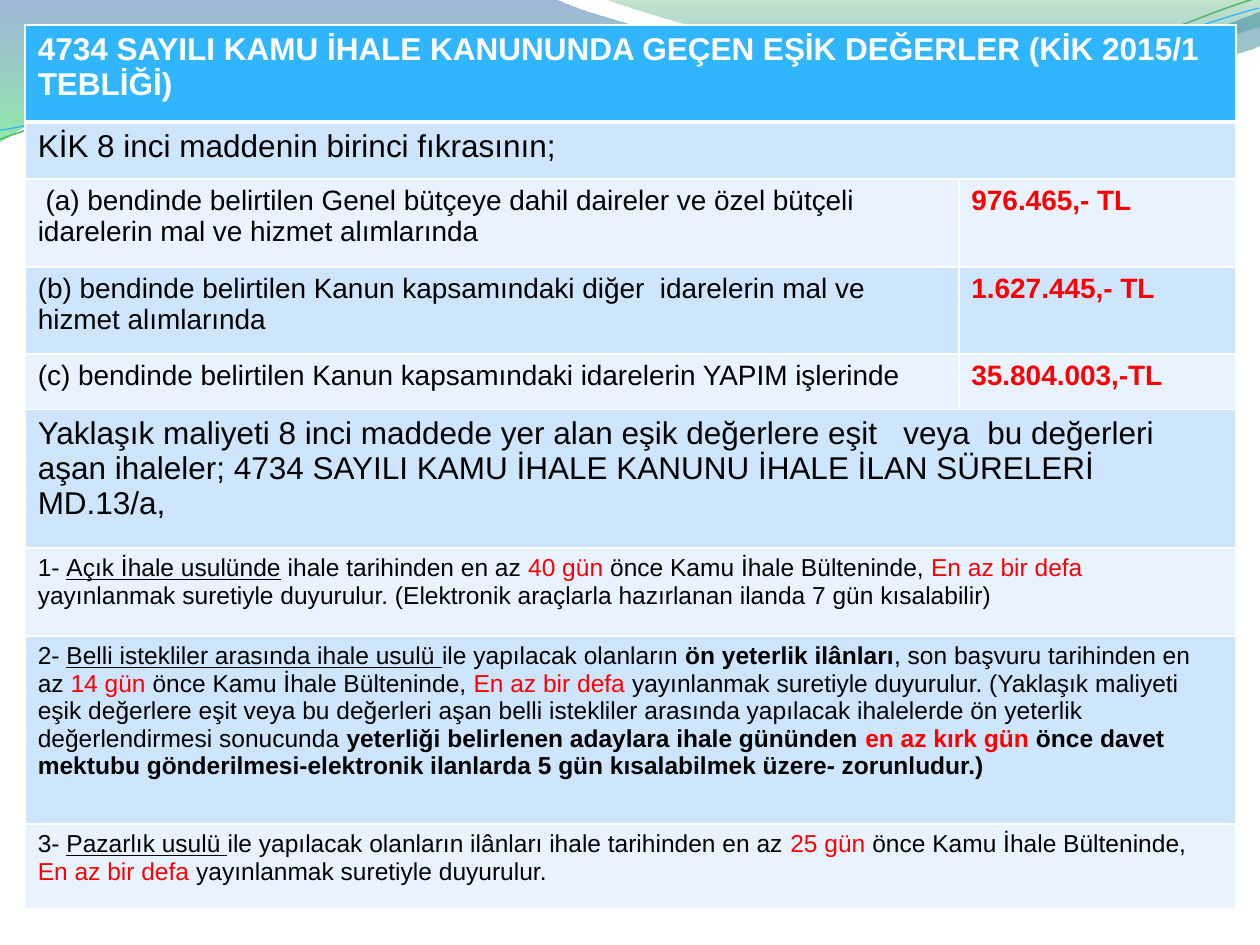
from lxml import etree
from pptx import Presentation
from pptx.dml.color import RGBColor
from pptx.oxml.ns import qn
from pptx.util import Pt

PX = 9144  # one px is a hundredth of an inch
FONT = "Arial"
LINE_TILT = 357.3
CELL_MARGIN_RIGHT = 14
COLORS = {
    "head": "31B6FD", "band_dark": "CEE5FE", "band_light": "E8F3FF",
    "text": "000000", "white": "FFFFFF", "red": "FF0000",
    "navy": "2960A7", "lime": "35DA5E", "green": "36A752", "blue": "2472D3",
    "green_line": "50B86A", "blue_line": "31B6FD",
}

# Wave outlines: a start point, then lines (one point) and curves (three points)
LEFT_WAVE = [
    [(0, 0)], [(440, -1)],
    [(476, 17), (664, 63), (758, 63)], [(853, 63), (958, 26), (1000, 9)],
    [(1001, 36)],
    [(983, 44), (870, 76), (746, 75)], [(622, 75), (382, 28), (257, 34)],
    [(129, 36), (46, 83), (-1, 113)],
]
RIGHT_WAVE = [
    [(479, -1)], [(509, 11), (682, 62), (769, 65)],
    [(856, 69), (961, 32), (1000, 21)], [(1000, 0)],
]
# Thin lines, before they are tilted
GREEN_LINE = [
    [(-2, 87)], [(47, 72), (158, 41), (277, 42)],
    [(396, 42), (591, 93), (712, 90)], [(832, 87), (940, 36), (1000, 22)],
]
BLUE_LINE = [
    [(-2, 80)], [(46, 75), (164, 45), (283, 46)],
    [(403, 46), (596, 88), (716, 85)], [(836, 83), (942, 42), (1001, 30)],
]

# Rows: height, text size, then cells as lists of (text, marks)
# Marks: b bold, u underlined, r red, w white
ROWS = [
    (77, 18, [[("4734 SAYILI KAMU İHALE KANUNUNDA GEÇEN EŞİK DEĞERLER (KİK 2015/1 TEBLİĞİ)", "bw")]]),
    (45, 18, [[("KİK 8 inci maddenin birinci fıkrasının;", "")]]),
    (70, 16, [[(" (a) bendinde belirtilen Genel bütçeye dahil daireler ve özel bütçeli "
                "idarelerin mal ve hizmet alımlarında", "")], [("976.465,- TL", "br")]]),
    (69, 16, [[("(b) bendinde belirtilen Kanun kapsamındaki diğer  idarelerin mal ve "
                "hizmet alımlarında", "")], [("1.627.445,- TL", "br")]]),
    (44, 16, [[("(c) bendinde belirtilen Kanun kapsamındaki idarelerin YAPIM işlerinde", "")],
              [("35.804.003,-TL", "br")]]),
    (110, 18, [[("Yaklaşık maliyeti 8 inci maddede yer alan eşik değerlere eşit   veya  bu "
                 "değerleri aşan ihaleler; 4734 SAYILI KAMU İHALE KANUNU İHALE İLAN "
                 "SÜRELERİ  MD.13/a,", "")]]),
    (70, 14, [[("1- ", ""), ("Açık İhale usulünde", "u"), (" ihale tarihinden en az ", ""),
               ("40 gün", "r"), (" önce Kamu İhale Bülteninde, ", ""), ("En az bir defa", "r"),
               (" yayınlanmak suretiyle duyurulur. (Elektronik araçlarla hazırlanan "
                "ilanda 7 gün kısalabilir)", "")]]),
    (149, 14, [[("2- ", ""), ("Belli istekliler arasında ihale usulü ", "u"),
                ("ile yapılacak olanların ", ""), ("ön yeterlik ilânları", "b"),
                (", son başvuru tarihinden en az ", ""), ("14 gün ", "r"),
                ("önce Kamu İhale Bülteninde, ", ""), ("En az bir defa ", "r"),
                ("yayınlanmak suretiyle duyurulur. (Yaklaşık maliyeti eşik değerlere eşit "
                 "veya bu değerleri aşan belli istekliler arasında yapılacak ihalelerde ön "
                 "yeterlik değerlendirmesi sonucunda ", ""),
                ("yeterliği belirlenen adaylara ihale gününden ", "b"), ("en az kırk gün ", "br"),
                ("önce davet mektubu gönderilmesi-elektronik ilanlarda 5 gün kısalabilmek "
                 "üzere- zorunludur.)", "b")]]),
    (67, 14, [[("3- ", ""), ("Pazarlık usulü ", "u"),
               ("ile yapılacak olanların ilânları ihale tarihinden en az ", ""),
               ("25 gün ", "r"), ("önce Kamu İhale Bülteninde, ", ""), ("En az bir defa", "r"),
               (" yayınlanmak suretiyle duyurulur.", "")]]),
]


def rgb(name):
    return RGBColor.from_string(COLORS[name])


def add_outline(page, origin, outline, close):
    """Build the outline through all its points, then bend the three-point segments."""
    points = [point for segment in outline for point in segment]
    builder = page.shapes.build_freeform(*points[0], scale=PX)
    builder.add_line_segments(points[1:], close=close)
    shape = builder.convert_to_shape(origin[0] * PX, origin[1] * PX)
    shape.shadow.inherit = False
    lines = shape._element.spPr.iter(qn("a:lnTo"))
    lines = iter(list(lines))
    for segment in outline[1:]:
        steps = [next(lines) for _ in segment]
        if len(steps) == 3:
            curve = etree.Element(qn("a:cubicBezTo"))
            steps[0].addprevious(curve)
            for step in steps:
                curve.append(step[0])
                step.getparent().remove(step)
    return shape


def add_wave(page, origin, outline, stops):
    """Stops are (position, colour, opacity percent), from top to bottom."""
    shape = add_outline(page, origin, outline, True)
    shape.line.fill.background()
    shape.fill.gradient()
    shape.fill.gradient_angle = 270
    for stop, (position, color, _) in zip(shape.fill.gradient_stops, stops):
        stop.position = position
        stop.color.rgb = rgb(color)
    for node, (_, _, opacity) in zip(shape._element.spPr.iter(qn("a:srgbClr")), stops):
        etree.SubElement(node, qn("a:alpha"), val=str(opacity * 1000))


def add_header_waves(page, left, top):
    origin = (left, top)
    add_wave(page, origin, LEFT_WAVE, [(0, "navy", 45), (1, "lime", 55)])
    add_wave(page, origin, RIGHT_WAVE, [(0, "green", 30), (0.8, "blue", 45)])
    for outline, color, width in ((GREEN_LINE, "green_line", 0.85),
                                  (BLUE_LINE, "blue_line", 0.75)):
        shape = add_outline(page, origin, outline, False)
        shape.rotation = LINE_TILT
        shape.fill.background()
        shape.line.color.rgb = rgb(color)
        shape.line.width = Pt(width)


def style_cell(cell, fill, bottom_width):
    cell.margin_right = CELL_MARGIN_RIGHT * PX
    properties = cell._tc.get_or_add_tcPr()
    for side, width in (("L", 1), ("R", 1), ("T", 1), ("B", bottom_width)):
        border = etree.SubElement(properties, qn(f"a:ln{side}"), w=str(Pt(width)))
        solid = etree.SubElement(border, qn("a:solidFill"))
        etree.SubElement(solid, qn("a:srgbClr"), val=COLORS["white"])
    cell.fill.solid()
    cell.fill.fore_color.rgb = rgb(fill)


def write_cell(cell, spans, size):
    para = cell.text_frame.paragraphs[0]
    for text, marks in spans:
        span = para.add_run()
        span.text = text
        span.font.name = FONT
        span.font.size = Pt(size)
        span.font.bold = "b" in marks
        span.font.underline = "u" in marks
        span.font.color.rgb = rgb("red" if "r" in marks else "white" if "w" in marks else "text")


def add_threshold_table(page, left, top, widths):
    height = sum(row[0] for row in ROWS)
    frame = page.shapes.add_table(len(ROWS), len(widths), left * PX, top * PX,
                                  sum(widths) * PX, height * PX)
    table = frame.table
    table.first_row = table.horz_banding = False
    for column, width in zip(table.columns, widths):
        column.width = width * PX
    for index, (row_height, size, contents) in enumerate(ROWS):
        table.rows[index].height = row_height * PX
        cells = list(table.rows[index].cells)
        fill = "head" if index == 0 else "band_dark" if index % 2 else "band_light"
        for cell in cells:
            style_cell(cell, fill, 3 if index == 0 else 1)
        if len(contents) == 1:
            cells[0].merge(cells[-1])
        for cell, spans in zip(cells, contents):
            write_cell(cell, spans, size)


def main():
    deck = Presentation()
    deck.slide_width, deck.slide_height = 1000 * PX, 750 * PX
    page = deck.slides.add_slide(deck.slide_layouts[6])
    add_header_waves(page, 0, 0)
    add_threshold_table(page, 20, 20, (741, 220))
    deck.save("out.pptx")


if __name__ == "__main__":
    main()
